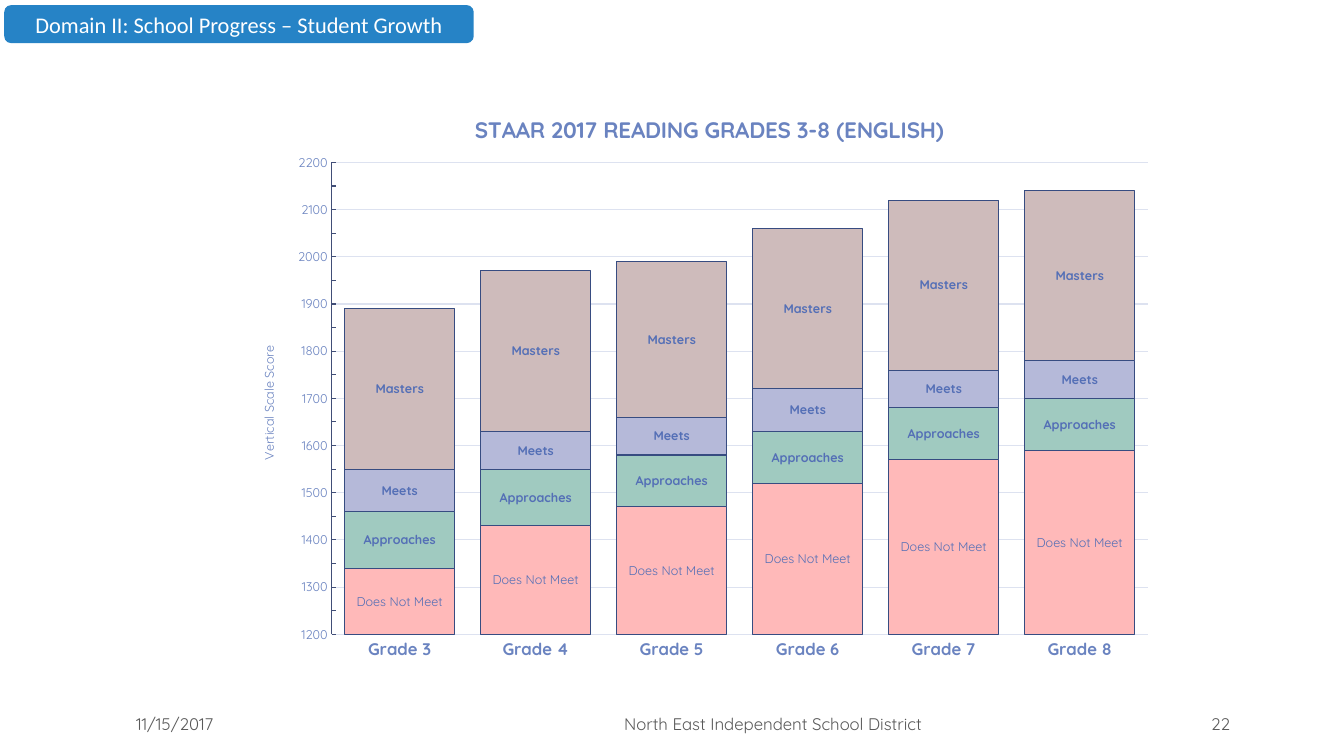
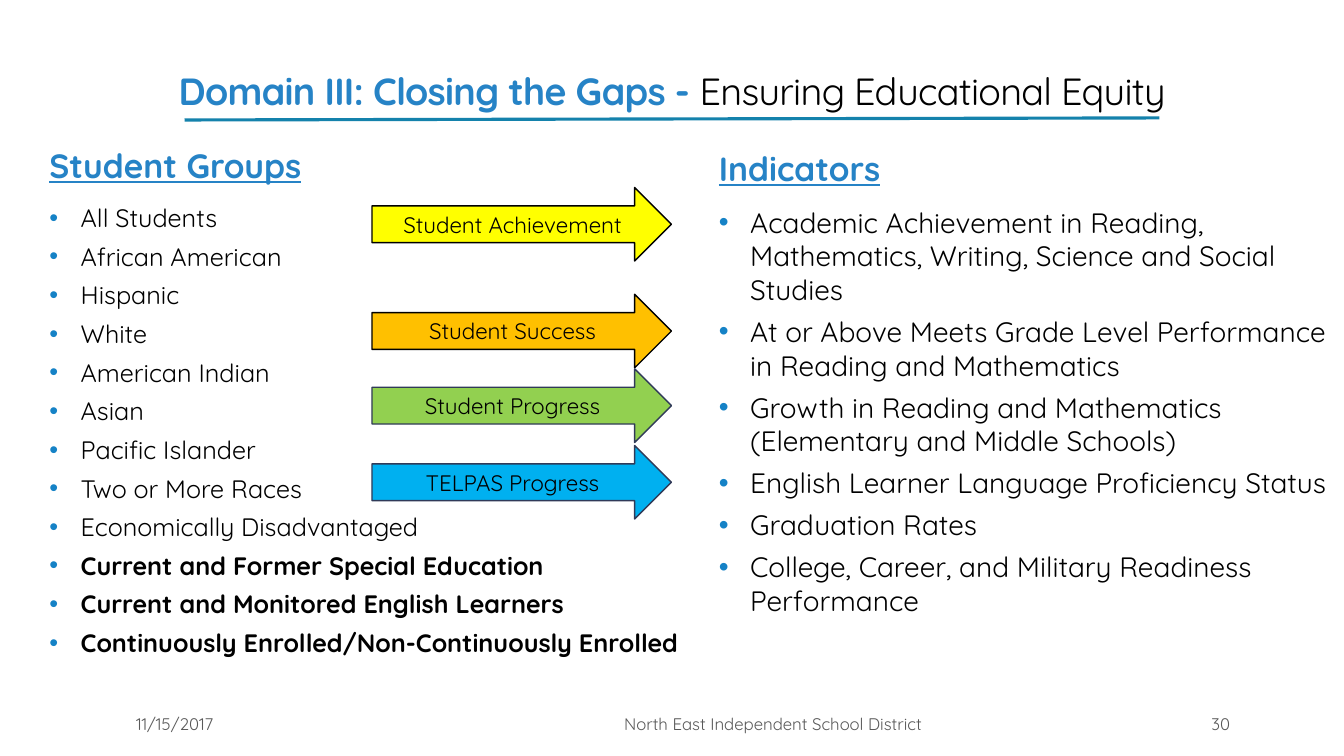
from dataclasses import dataclass

from lxml.etree import SubElement
from pptx import Presentation
from pptx.chart.data import CategoryChartData
from pptx.dml.color import RGBColor
from pptx.enum.chart import XL_CHART_TYPE, XL_LABEL_POSITION, XL_TICK_MARK
from pptx.enum.shapes import MSO_CONNECTOR, MSO_SHAPE
from pptx.enum.text import MSO_ANCHOR, MSO_AUTO_SIZE, PP_ALIGN
from pptx.oxml.ns import qn
from pptx.util import Emu, Inches, Pt

WIDE, HIGH = Inches(13.33), Inches(7.5)


@dataclass(frozen=True)
class Theme:
    face: str = "Quicksand"
    tag_face: str = "Calibri"
    blue: str = "2683C6"
    dot: str = "1582C6"
    rule: str = "1482AC"
    ink: str = "000000"
    edge: str = "303A58"
    gray: str = "595959"
    white: str = "FFFFFF"
    axis: str = "6A83C0"
    spine: str = "414E77"
    grid: str = "DDE2F0"
    label: str = "546FB6"
    frame: str = "374C81"
    title: float = 27
    head: float = 24
    tag: float = 16
    foot: float = 12
    cat: float = 12
    tick: float = 9


@dataclass(frozen=True)
class Box:
    """Place in percent of the slide's width and height."""
    left: float
    top: float
    wide: float
    high: float

    def emu(self):
        return (across(self.left), down(self.top),
                across(self.wide), down(self.high))


@dataclass(frozen=True)
class Band:
    name: str
    vals: tuple
    hue: str
    bold: bool = True


@dataclass(frozen=True)
class Arrow:
    text: str
    top: float
    fill: str
    edge: str


@dataclass(frozen=True)
class Group:
    head: str
    box: Box
    size: float
    items: tuple
    strong: tuple = ()


LOOK = Theme()

BANDS = (
    Band("Does Not Meet", (1340, 1430, 1470, 1520, 1570, 1590), "FFB9B9", False),
    Band("Approaches", (120, 120, 110, 110, 110, 110), "A0CAC0"),
    Band("Meets", (90, 80, 80, 90, 80, 80), "B5B9D9"),
    Band("Masters", (340, 340, 330, 340, 360, 360), "CEBBBB"),
)

ARROWS = (
    Arrow("Student Achievement", 24.8, "FFFF00", LOOK.ink),
    Arrow("Student Success", 38.93, "FFC000", LOOK.ink),
    Arrow("Student Progress", 48.8, "92D050", LOOK.edge),
    Arrow("TELPAS Progress", 58.93, "00B0F0", LOOK.edge),
)

GROUPS = (
    Group("Student Groups", Box(2.93, 18.53, 54.24, 74.93), 18,
          ("All Students", "African American", "Hispanic", "White",
           "American Indian", "Asian", "Pacific Islander",
           "Two or More Races", "Economically Disadvantaged"),
          ("Current and Former Special Education",
           "Current and Monitored English Learners",
           "Continuously Enrolled/Non-Continuously Enrolled")),
    Group("Indicators", Box(52.74, 18.93, 47.26, 68.4), 20,
          ("Academic Achievement in Reading, Mathematics, Writing, "
           "Science and Social Studies",
           "At or Above Meets Grade Level Performance in Reading and Mathematics",
           "Growth in Reading and Mathematics (Elementary and Middle Schools)",
           "English Learner Language Proficiency Status",
           "Graduation Rates",
           "College, Career, and Military Readiness Performance")),
)


# Basic helpers
def across(share: float) -> Emu:
    return Emu(round(WIDE * share / 100))


def down(share: float) -> Emu:
    return Emu(round(HIGH * share / 100))


def rgb(hue: str) -> RGBColor:
    return RGBColor.from_string(hue)


def style(font, size: float, hue: str, bold=False, face=LOOK.face) -> None:
    font.size, font.bold, font.name = Pt(size), bold, face
    font.color.rgb = rgb(hue)


def write(par, text: str, *, size: float, hue=LOOK.ink, bold=False,
          face=LOOK.face, under=False, align=None, track=None) -> None:
    run = par.add_run()
    run.text = text
    style(run.font, size, hue, bold, face)
    if under:
        run.font.underline = True
    if align is not None:
        par.alignment = align
    if track is not None:
        run.font._element.set("spc", str(round(track * 100)))


def stroke(line, hue: str, width: float) -> None:
    line.color.rgb = rgb(hue)
    line.width = Pt(width)


def place(shape, box: Box) -> None:
    shape.left, shape.top, shape.width, shape.height = box.emu()


def draw(slide, kind, box: Box, fill: str, edge: str, width: float):
    shape = slide.shapes.add_shape(kind, *box.emu())
    shape.shadow.inherit = False
    shape.fill.solid()
    shape.fill.fore_color.rgb = rgb(fill)
    stroke(shape.line, edge, width)
    return shape


def head(slide, box: Box, anchor):
    """Moves the title placeholder and returns its first paragraph."""
    place(slide.shapes.title, box)
    frame = slide.shapes.title.text_frame
    frame.auto_size, frame.vertical_anchor = MSO_AUTO_SIZE.NONE, anchor
    frame.word_wrap = True
    return frame.paragraphs[0]


def foot(slide, page: str) -> None:
    for text, left, wide, align in (
            ("11/15/2017", 9.15, 22.5, PP_ALIGN.LEFT),
            ("North East Independent School District", 32.03, 51, PP_ALIGN.CENTER),
            (page, 83.42, 9.08, PP_ALIGN.RIGHT)):
        frame = slide.shapes.add_textbox(
            *Box(left, 93.33, wide, 4.67).emu()).text_frame
        frame.word_wrap, frame.vertical_anchor = True, MSO_ANCHOR.BOTTOM
        frame.margin_left = frame.margin_right = Inches(0.13)
        frame.margin_top = frame.margin_bottom = Inches(0.07)
        write(frame.paragraphs[0], text, size=LOOK.foot, hue=LOOK.gray,
              align=align)


# Chart slide
def pin(part, index: int, **shares: float) -> None:
    """Fixes a chart part at shares of the chart's size."""
    for old in part.findall(qn("c:layout")):
        part.remove(old)
    layout = SubElement(part, qn("c:layout"))
    part.insert(index, layout)
    manual = SubElement(layout, qn("c:manualLayout"))
    if "w" in shares:
        SubElement(manual, qn("c:layoutTarget")).set("val", "inner")
    for key in ("xMode", "yMode"):
        SubElement(manual, qn(f"c:{key}")).set("val", "edge")
    for key, share in shares.items():
        SubElement(manual, qn(f"c:{key}")).set("val", str(share))


def plot(slide) -> None:
    data = CategoryChartData(number_format="###0;###0")
    data.categories = [f"Grade {n}" for n in range(3, 9)]
    for band in BANDS:
        data.add_series(band.name, band.vals)
    chart = slide.shapes.add_chart(
        XL_CHART_TYPE.COLUMN_STACKED,
        *Box(17.78, 11.47, 69, 77.07).emu(), data).chart
    style(chart.font, 10, LOOK.frame)
    chart.has_legend = False
    bars = chart.plots[0]
    bars.gap_width, bars.overlap, bars.vary_by_categories = 24, 100, False

    # Titles and plot area
    cats, vals = chart.category_axis, chart.value_axis
    write(chart.chart_title.text_frame.paragraphs[0],
          "STAAR 2017 READING GRADES 3-8 (ENGLISH)",
          size=LOOK.tag, hue=LOOK.axis, bold=True)
    write(vals.axis_title.text_frame.paragraphs[0], "Vertical Scale Score",
          size=LOOK.tick, hue=LOOK.axis)
    pin(chart.chart_title._element, 1, x=0.25, y=0.04)
    pin(vals.axis_title._element, 1, x=0.02, y=0.44)
    pin(chart._chartSpace.chart.plotArea, 0, x=0.1, y=0.13, w=0.88, h=0.81)

    # Axes
    for axis, size, bold, hue in ((cats, LOOK.cat, True, LOOK.grid),
                                  (vals, LOOK.tick, False, LOOK.spine)):
        style(axis.tick_labels.font, size, LOOK.axis, bold)
        stroke(axis.format.line, hue, 0.75)
        axis.major_tick_mark = axis.minor_tick_mark = XL_TICK_MARK.NONE
    vals.minimum_scale, vals.maximum_scale = 1200, 2200
    vals.major_unit, vals.minor_unit = 100, 50
    vals.minor_tick_mark = XL_TICK_MARK.INSIDE
    vals.has_major_gridlines = True
    stroke(vals.major_gridlines.format.line, LOOK.grid, 0.75)

    # Score bands
    for series, band in zip(bars.series, BANDS):
        series.format.fill.solid()
        series.format.fill.fore_color.rgb = rgb(band.hue)
        stroke(series.format.line, LOOK.frame, 0.75)
        tags = series.data_labels
        style(tags.font, LOOK.tick, LOOK.label, band.bold)
        tags.show_series_name, tags.show_value = True, False
        tags.position = XL_LABEL_POSITION.CENTER


def growth(deck) -> None:
    slide = deck.slides.add_slide(deck.slide_layouts[5])
    box = Box(0.38, 0.8, 34.8, 4.8)
    pill = draw(slide, MSO_SHAPE.ROUNDED_RECTANGLE, box, LOOK.blue,
                LOOK.blue, 1.25)
    slide.shapes.title._element.addprevious(pill._element)
    write(head(slide, box, MSO_ANCHOR.MIDDLE),
          "Domain II: School Progress – Student Growth", size=LOOK.tag,
          hue=LOOK.white, face=LOOK.tag_face, align=PP_ALIGN.CENTER)
    plot(slide)
    foot(slide, "22")


# Lists slide
def bullet(par, shown: bool) -> None:
    props = par._p.get_or_add_pPr()
    step = Inches(0.31) if shown else 0
    props.set("marL", str(step))
    props.set("indent", str(-step))
    if not shown:
        SubElement(props, qn("a:buNone"))
        return
    hue = SubElement(props, qn("a:buClr"))
    SubElement(hue, qn("a:srgbClr")).set("val", LOOK.dot)
    SubElement(props, qn("a:buFont")).set("typeface", "Arial")
    SubElement(props, qn("a:buChar")).set("char", "•")


def fill(holder, group: Group) -> None:
    place(holder, group.box)
    frame = holder.text_frame
    frame.auto_size, frame.word_wrap = MSO_AUTO_SIZE.NONE, True
    for n, text in enumerate((group.head, *group.items, *group.strong)):
        first = n == 0
        par = frame.paragraphs[0] if first else frame.add_paragraph()
        size = LOOK.head if first else group.size
        bullet(par, not first)
        par.space_before, par.space_after = Pt(0), Pt(12 if first else 6)
        par.line_spacing = Pt(size * 1.2)
        write(par, text, size=size, hue=LOOK.blue if first else LOOK.ink,
              bold=first or text in group.strong, under=first)


def gaps(deck) -> None:
    slide = deck.slides.add_slide(deck.slide_layouts[3])
    par = head(slide, Box(10.65, 8.27, 78.69, 8.4), MSO_ANCHOR.TOP)
    for text, hue, bold in (("Domain III: Closing the Gaps - ", LOOK.blue, True),
                            ("Ensuring Educational Equity", LOOK.ink, False)):
        write(par, text, size=LOOK.title, hue=hue, bold=bold, track=-0.5,
              align=PP_ALIGN.CENTER)
    rule = slide.shapes.add_connector(
        MSO_CONNECTOR.STRAIGHT, across(13.73), down(15.87),
        across(86.27), down(15.6))
    stroke(rule.line, LOOK.rule, 2.25)
    SubElement(rule._element.spPr, qn("a:effectLst"))
    for n, group in enumerate(GROUPS, 1):
        fill(slide.placeholders[n], group)
    for arrow in ARROWS:
        shape = draw(slide, MSO_SHAPE.RIGHT_ARROW,
                     Box(27.68, arrow.top, 22.28, 9.73),
                     arrow.fill, arrow.edge, 1)
        shape.text_frame.vertical_anchor = MSO_ANCHOR.MIDDLE
        write(shape.text_frame.paragraphs[0], arrow.text, size=LOOK.tag,
              align=PP_ALIGN.CENTER)
    foot(slide, "30")


def main() -> None:
    deck = Presentation()
    deck.slide_width, deck.slide_height = WIDE, HIGH
    growth(deck)
    gaps(deck)
    deck.save("out.pptx")


if __name__ == "__main__":
    main()
